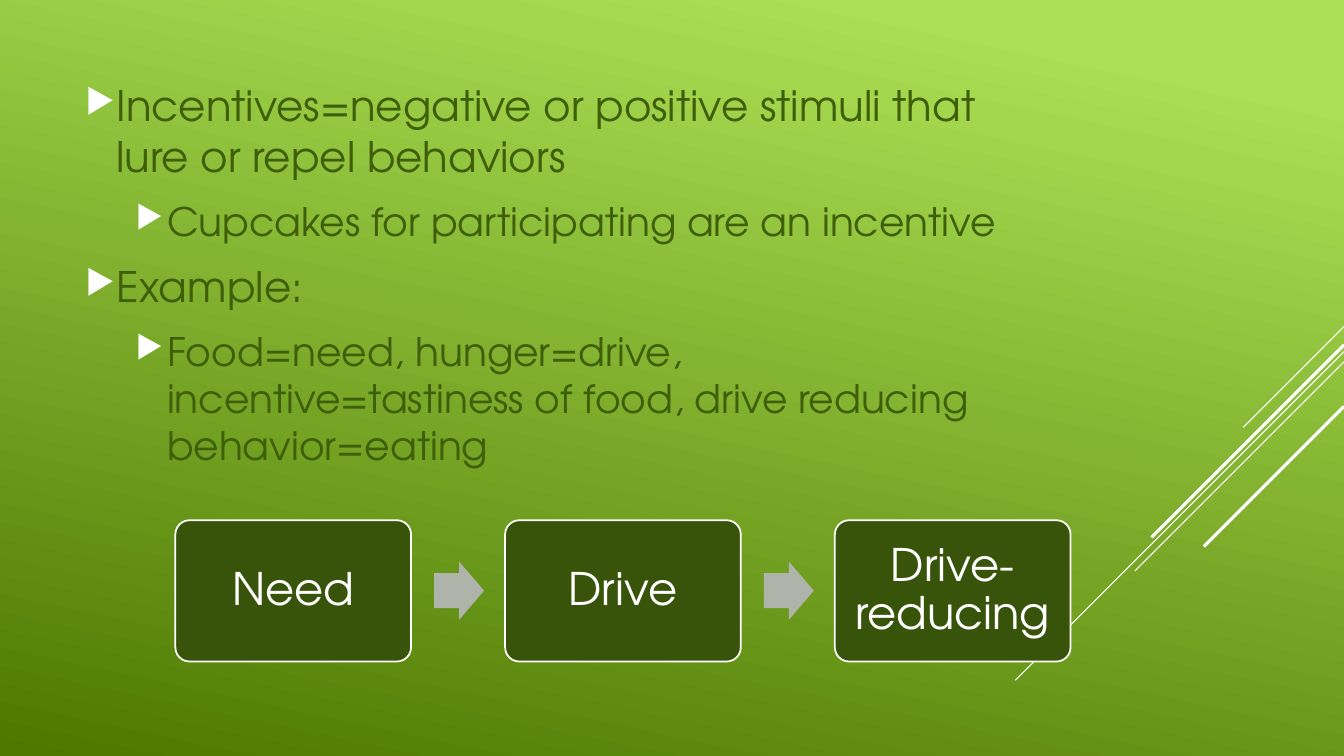
from lxml.etree import SubElement
from pptx import Presentation
from pptx.dml.color import RGBColor
from pptx.enum.shapes import MSO_CONNECTOR as CONN, MSO_SHAPE as SHAPE
from pptx.enum.text import MSO_ANCHOR as ANCHOR, PP_ALIGN as ALIGN
from pptx.oxml.ns import qn
from pptx.util import Cm, Pt

COLORS = {
    "light": "ACDF55",
    "dark": "4C7800",
    "body": "3E5E08",
    "box": "38540A",
    "arrow": "AFB4AB",
    "white": "FFFFFF",
}


def rgb(name):
    return RGBColor.from_string(COLORS[name])


def write(p, text, *, font, size, color, align=ALIGN.LEFT, before=0, after=0, spacing=None):
    p.alignment = align
    p.space_before, p.space_after = Pt(before), Pt(after)
    if spacing:
        p.line_spacing = spacing
    r = p.add_run()
    r.text = text
    r.font.name, r.font.size = font, Pt(size)
    r.font.color.rgb = rgb(color)


class Deck:
    font = "TeX Gyre Adventor"

    def __init__(self, prs):
        self.s = prs.slides.add_slide(prs.slide_layouts[6])

    def background(self, start, end, angle):
        fill = self.s.background.fill
        fill.gradient()
        fill.gradient_angle = angle
        for stop, (pos, color) in zip(fill.gradient_stops, (start, end)):
            stop.position, stop.color.rgb = pos, rgb(color)

    def line(self, x1, y1, x2, y2, width):
        c = self.s.shapes.add_connector(CONN.STRAIGHT, Cm(x1), Cm(y1), Cm(x2), Cm(y2))
        c.line.color.rgb, c.line.width = rgb("white"), Pt(width)
        SubElement(c._element.spPr, qn("a:effectLst"))

    def bullets(self, x, y, w, h, items):
        tf = self.s.shapes.add_textbox(Cm(x), Cm(y), Cm(w), Cm(h)).text_frame
        tf.word_wrap, tf.vertical_anchor = True, ANCHOR.MIDDLE
        for i, (level, text) in enumerate(items):
            p = tf.add_paragraph() if i else tf.paragraphs[0]
            size = 30 - 2 * level
            p.level = level
            write(p, text, font=self.font, size=size, color="body", before=size * 0.2, after=6)
            pPr = p._p.get_or_add_pPr()
            pPr.set("marL", str(Cm(0.79 + 1.27 * level)))
            pPr.set("indent", str(Cm(-0.79)))
            clr = SubElement(pPr, qn("a:buClr"))
            SubElement(clr, qn("a:srgbClr"), val=COLORS["white"])
            SubElement(pPr, qn("a:buSzPct"), val="80000")
            SubElement(pPr, qn("a:buChar"), char="▶")

    def shape(self, kind, x, y, w, h, fill, adjust):
        sp = self.s.shapes.add_shape(kind, Cm(x), Cm(y), Cm(w), Cm(h))
        sp.shadow.inherit = False
        sp.fill.solid()
        sp.fill.fore_color.rgb = rgb(fill)
        sp.line.fill.background()
        for i, value in enumerate(adjust):
            sp.adjustments[i] = value
        return sp

    def box(self, x, y, w, h, text):
        sp = self.shape(SHAPE.ROUNDED_RECTANGLE, x, y, w, h, "box", [0.1])
        sp.line.color.rgb, sp.line.width = rgb("white"), Pt(1.25)
        tf = sp.text_frame
        tf.word_wrap, tf.vertical_anchor = True, ANCHOR.MIDDLE
        tf.margin_left = tf.margin_right = tf.margin_top = tf.margin_bottom = Cm(0.33)
        write(tf.paragraphs[0], text, font=self.font, size=32, color="white",
              align=ALIGN.CENTER, spacing=0.9)

    def arrow(self, x, y, w, h):
        self.shape(SHAPE.RIGHT_ARROW, x, y, w, h, "arrow", [0.6, 0.5])


def main():
    prs = Presentation()
    prs.slide_width, prs.slide_height = Cm(33.87), Cm(19.05)
    deck = Deck(prs)
    deck.background((0.1, "light"), (1, "dark"), 360 - 102)

    # Diagonal lines from the right edge: start height, run, weight
    right = 33.87
    for y, run, width in [(8.23, 2.54, 0.75), (8.86, 8.28, 0.75), (9.12, 5.27, 0.75),
                          (8.69, 4.85, 2.25), (10.24, 3.53, 2.25)]:
        deck.line(right, y, right - run, y + run, width)

    # Body text
    deck.bullets(1.9, 1.9, 23.7, 10.03, [
        (0, "Incentives=negative or positive stimuli that lure or repel behaviors"),
        (1, "Cupcakes for participating are an incentive"),
        (0, "Example:"),
        (1, "Food=need, hunger=drive, incentive=tastiness of food, "
            "drive reducing behavior=eating"),
    ])

    # Process: boxes with an arrow between neighbours
    left, pitch = 4.42, 8.31
    for i, step in enumerate(["Need", "Drive", "Drive-reducing"]):
        x = left + i * pitch
        if i:
            deck.arrow(x - 1.79, 14.15, 1.26, 1.47)
        deck.box(x, 13.11, 5.94, 3.56, step)

    prs.save("out.pptx")


if __name__ == "__main__":
    main()
